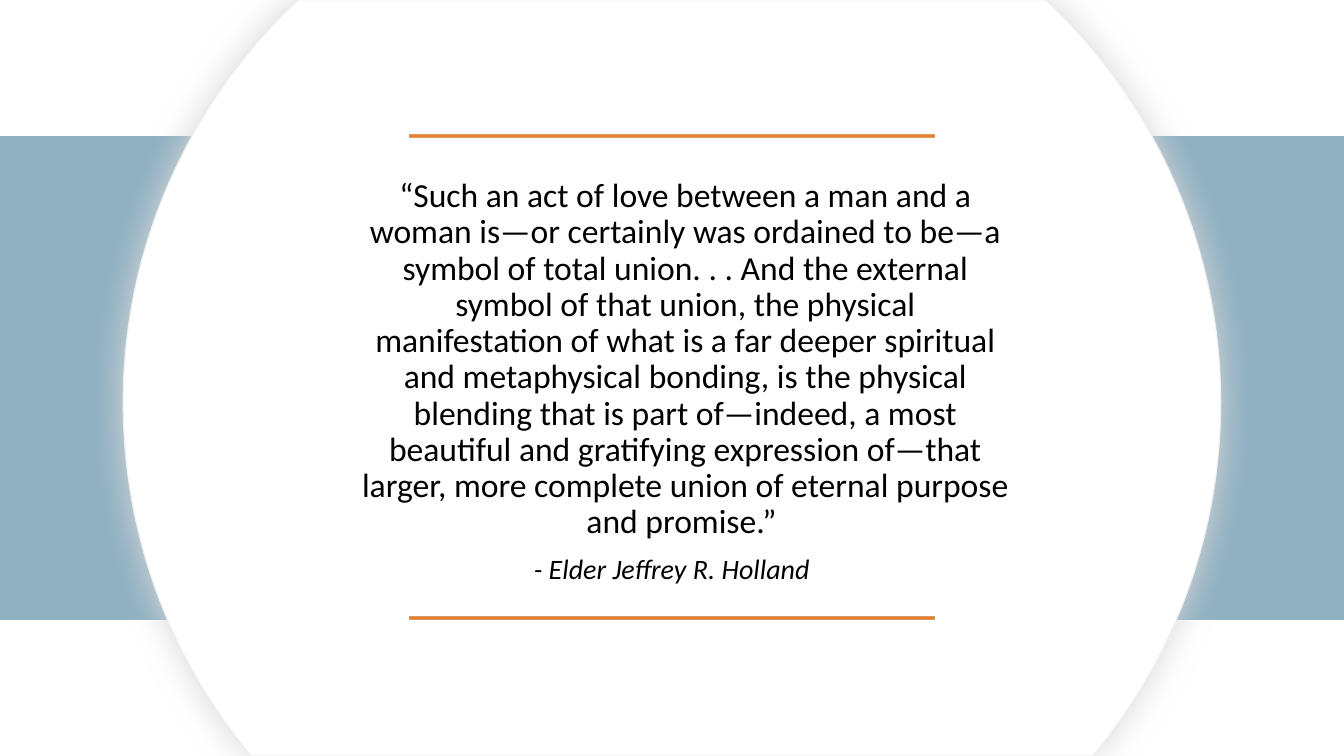
"""Build a quotation slide with a blue band, a clipped disc and two orange rules."""
from dataclasses import dataclass

from lxml import etree
from pptx import Presentation
from pptx import util as u
from pptx.dml.color import RGBColor
from pptx.enum import shapes, text
from pptx.oxml import ns

WHITE = RGBColor(0xFF, 0xFF, 0xFF)
BLACK = RGBColor(0, 0, 0)
BLUE = RGBColor(0x90, 0xB1, 0xC2)
ORANGE = RGBColor(0xED, 0x7D, 0x31)
TAN = RGBColor(0xD0, 0x9D, 0x5C)
PALE_GREY = RGBColor(0xEF, 0xEF, 0xEF)
SHADOW_GREY = RGBColor(0xD8, 0xD8, 0xD8)

SLIDE_WIDTH, SLIDE_HEIGHT = 960, 540
DISC_CENTER = 480
RIGHT_HALF = [
    (267, 0), (277.4, 10.1),
    (348, 81.4), (392, 179.3), (392, 287.3),
    (392, 382.3), (358.6, 469.4), (302.8, 537.1),
    (300.2, SLIDE_HEIGHT),
]
CURVE_STARTS = (2, 5, 11, 14)

QUOTE = (
    "“Such an act of love between a man and a woman is—or certainly was ordained to be—"
    "a symbol of total union. . . And the external symbol of that union, the physical "
    "manifestation of what is a far deeper spiritual and metaphysical bonding, is the "
    "physical blending that is part of—indeed, a most beautiful and gratifying expression "
    "of—that larger, more complete union of eternal purpose and promise.” "
)
SPEAKER = "- Elder Jeffrey R. Holland"


@dataclass(frozen=True)
class Box:
    left: float
    top: float
    width: float
    height: float

    def lengths(self) -> list[u.Length]:
        return [u.Pt(value) for value in (self.left, self.top, self.width, self.height)]


@dataclass(frozen=True)
class Bar:
    box: Box
    fill: RGBColor
    line: RGBColor


BAND = Bar(Box(0, 97.2, SLIDE_WIDTH, 345.2), BLUE, BLUE)
RULES = [Bar(Box(292.7, top, 374.6, 2.2), ORANGE, TAN) for top in (96.2, 440.2)]


def paint(shape, fill: RGBColor, line: RGBColor) -> None:
    shape.shadow.inherit = False
    shape.fill.solid()
    shape.fill.fore_color.rgb = fill
    shape.line.color.rgb = line
    shape.line.width = u.Pt(0.75)


def add_bar(slide, bar: Bar) -> None:
    shape = slide.shapes.add_shape(shapes.MSO_SHAPE.RECTANGLE, *bar.box.lengths())
    paint(shape, bar.fill, bar.line)


def add_glow(shape, color: RGBColor, blur: float) -> None:
    effects = shape.element.spPr.find(ns.qn("a:effectLst"))
    shadow = etree.SubElement(effects, ns.qn("a:outerShdw"), blurRad=str(u.Pt(blur)),
                              dist="0", dir="0", algn="ctr", rotWithShape="0")
    etree.SubElement(shadow, ns.qn("a:srgbClr"), val=str(color))


def bend(shape, starts: tuple[int, ...]) -> None:
    outline = next(shape.element.iter(ns.qn("a:path")))
    steps = list(outline)
    for start in starts:
        curve = etree.Element(ns.qn("a:cubicBezTo"))
        steps[start].addprevious(curve)
        for step in steps[start:start + 3]:
            curve.append(step[0])
            outline.remove(step)


def add_clipped_disc(slide) -> None:
    left_half = [(-x, y) for x, y in reversed(RIGHT_HALF)]
    start, *others = [(u.Pt(DISC_CENTER + x), u.Pt(y)) for x, y in RIGHT_HALF + left_half]
    builder = slide.shapes.build_freeform(*start, scale=1.0)
    builder.add_line_segments(others, close=True)
    disc = builder.convert_to_shape()
    bend(disc, CURVE_STARTS)
    paint(disc, WHITE, PALE_GREY)
    add_glow(disc, SHADOW_GREY, blur=25)


def place_text(slide, placeholder, content: str, *, box: Box, size: float,
               italic: bool = False) -> None:
    slide.shapes.element.append(placeholder.element)
    placeholder.left, placeholder.top, placeholder.width, placeholder.height = box.lengths()
    frame = placeholder.text_frame
    frame.word_wrap = True
    frame.auto_size = text.MSO_AUTO_SIZE.NONE
    frame.vertical_anchor = text.MSO_ANCHOR.MIDDLE
    frame.margin_left = frame.margin_right = u.Pt(7.2)
    frame.margin_top = frame.margin_bottom = u.Pt(3.6)
    paragraph = frame.paragraphs[0]
    paragraph.alignment = text.PP_ALIGN.CENTER
    paragraph.line_spacing = 0.9
    paragraph.space_before = u.Pt(0)
    run = paragraph.add_run()
    run.text = content
    run.font.name = "Calibri"
    run.font.size = u.Pt(size)
    run.font.italic = italic
    run.font.color.rgb = BLACK


def main() -> None:
    presentation = Presentation()
    presentation.slide_width = u.Pt(SLIDE_WIDTH)
    presentation.slide_height = u.Pt(SLIDE_HEIGHT)
    slide = presentation.slides.add_slide(presentation.slide_layouts[0])
    title, body = slide.placeholders
    add_bar(slide, BAND)
    add_clipped_disc(slide)
    place_text(slide, title, QUOTE, box=Box(250.8, 121.3, 477.4, 271.4), size=24)
    for rule in RULES:
        add_bar(slide, rule)
    place_text(slide, body, SPEAKER, box=Box(250.6, 373.7, 458.6, 67), size=20, italic=True)
    presentation.save("out.pptx")


if __name__ == "__main__":
    main()
